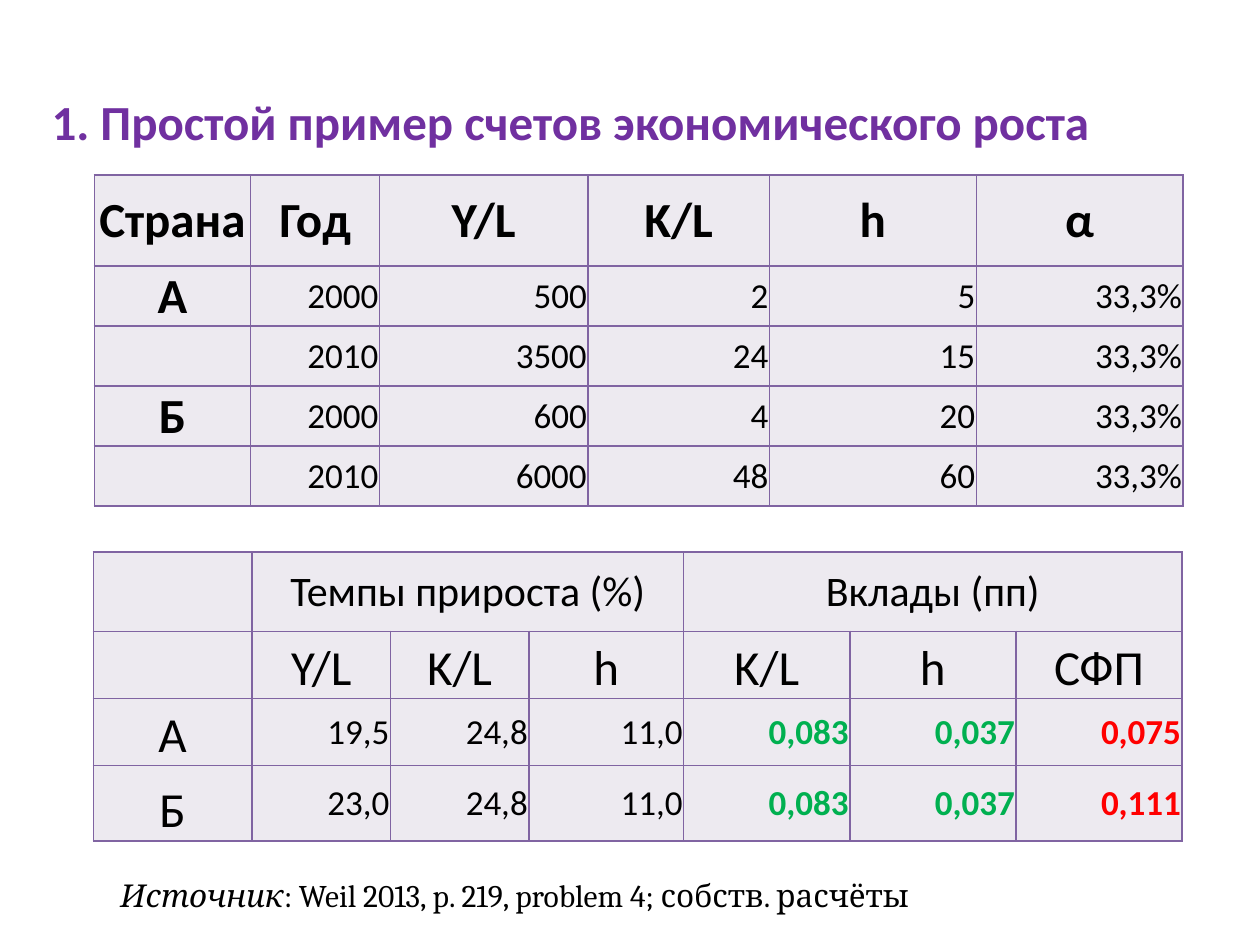
from dataclasses import dataclass

from lxml import etree
from pptx import Presentation
from pptx.dml.color import RGBColor
from pptx.enum.text import MSO_ANCHOR, PP_ALIGN
from pptx.oxml.ns import qn
from pptx.slide import Slide
from pptx.table import _Cell
from pptx.text.text import _Run
from pptx.util import Cm, Pt

CENTER, RIGHT = PP_ALIGN.CENTER, PP_ALIGN.RIGHT
MIDDLE, BOTTOM = MSO_ANCHOR.MIDDLE, MSO_ANCHOR.BOTTOM


@dataclass(frozen=True)
class Theme:
    body_font: str = "Calibri"
    source_font: str = "Cambria"
    title: str = "7030A0"
    text: str = "000000"
    cell: str = "EDEAF0"
    border: str = "8064A2"
    factor: str = "00B050"
    productivity: str = "FF0000"
    heading_size: int = 28
    group_size: int = 24
    value_size: int = 20
    source_size: int = 18
    border_width: int = 1


THEME = Theme()


@dataclass(frozen=True)
class CellStyle:
    size: int = THEME.heading_size
    color: str = THEME.text
    bold: bool = False
    align: PP_ALIGN = CENTER
    anchor: MSO_ANCHOR = MIDDLE


@dataclass(frozen=True)
class Row:
    height: float
    texts: list[str]
    styles: list[CellStyle]


@dataclass(frozen=True)
class Grid:
    """Table in centimetres; merges hold (row, first column, last column)."""
    left: float
    top: float
    widths: list[float]
    rows: list[Row]
    merges: tuple[tuple[int, int, int], ...] = ()


@dataclass(frozen=True)
class Phrase:
    text: str
    font: str
    size: int
    color: str
    bold: bool = False
    italic: bool = False


STRONG = CellStyle(bold=True)
GROUP = CellStyle(THEME.group_size)
LABEL = CellStyle(anchor=BOTTOM)
VALUE = CellStyle(THEME.value_size, align=RIGHT)
FACTOR = CellStyle(THEME.value_size, THEME.factor, True, RIGHT)
PRODUCTIVITY = CellStyle(THEME.value_size, THEME.productivity, True, RIGHT)

DATA_STYLES = [STRONG] + [VALUE] * 5
GROWTH_STYLES = [LABEL] + [VALUE] * 3 + [FACTOR] * 2 + [PRODUCTIVITY]

COUNTRY_DATA = Grid(
    1.9, 3.53, [3.15, 2.6, 4.2, 3.66, 4.17, 4.17],
    [Row(1.83, ["Страна", "Год", "Y/L", "K/L", "h", "α"], [STRONG] * 6)]
    + [Row(1.21, texts + ["33,3%"], DATA_STYLES) for texts in (
        ["А", "2000", "500", "2", "5"],
        ["", "2010", "3500", "24", "15"],
        ["Б", "2000", "600", "4", "20"],
        ["", "2010", "6000", "48", "60"],
    )],
)

GROWTH_ACCOUNTS = Grid(
    1.88, 11.13, [3.2, 2.79, 2.79, 3.12, 3.35, 3.35, 3.35],
    [
        Row(1.6, ["", "Темпы прироста (%)", "", "", "Вклады (пп)", "", ""],
            [GROUP] * 7),
        Row(1.35, ["", "Y/L", "K/L", "h", "K/L", "h", "СФП"], [LABEL] * 7),
        Row(1.35, ["А", "19,5", "24,8", "11,0", "0,083", "0,037", "0,075"],
            GROWTH_STYLES),
        Row(1.52, ["Б", "23,0", "24,8", "11,0", "0,083", "0,037", "0,111"],
            GROWTH_STYLES),
    ],
    merges=((0, 1, 3), (0, 4, 6)),
)


def format_run(run: _Run, font: str, size: int, color: str,
               bold: bool, italic: bool = False) -> None:
    run.font.name = font
    run.font.size = Pt(size)
    run.font.color.rgb = RGBColor.from_string(color)
    run.font.bold = bold
    run.font.italic = italic


def add_borders(cell: _Cell) -> None:
    properties = cell._tc.get_or_add_tcPr()
    for side in ("a:lnL", "a:lnR", "a:lnT", "a:lnB"):
        line = etree.SubElement(properties, qn(side),
                                w=str(Pt(THEME.border_width)))
        fill = etree.SubElement(line, qn("a:solidFill"))
        etree.SubElement(fill, qn("a:srgbClr"), val=THEME.border)


def fill_cell(cell: _Cell, text: str, style: CellStyle) -> None:
    add_borders(cell)
    cell.fill.solid()
    cell.fill.fore_color.rgb = RGBColor.from_string(THEME.cell)
    cell.margin_left = cell.margin_right = cell.margin_top = Cm(0.02)
    cell.margin_bottom = 0
    cell.vertical_anchor = style.anchor
    cell.text_frame.text = text
    paragraph = cell.text_frame.paragraphs[0]
    paragraph.alignment = style.align
    for run in paragraph.runs:
        format_run(run, THEME.body_font, style.size, style.color, style.bold)


def draw_grid(slide: Slide, grid: Grid) -> None:
    table = slide.shapes.add_table(
        len(grid.rows), len(grid.widths), Cm(grid.left), Cm(grid.top),
        Cm(sum(grid.widths)), Cm(sum(row.height for row in grid.rows)),
    ).table
    table.first_row = table.horz_banding = False
    for column, width in zip(table.columns, grid.widths):
        column.width = Cm(width)
    for row_index, first, last in grid.merges:
        table.cell(row_index, first).merge(table.cell(row_index, last))
    for table_row, row in zip(table.rows, grid.rows):
        table_row.height = Cm(row.height)
        for cell, text, style in zip(table_row.cells, row.texts, row.styles):
            fill_cell(cell, text, style)


def draw_line(slide: Slide, left: float, top: float, width: float,
              height: float, phrases: list[Phrase]) -> None:
    """Adds a one-paragraph text box made of differently styled phrases."""
    frame = slide.shapes.add_textbox(
        Cm(left), Cm(top), Cm(width), Cm(height)).text_frame
    frame.word_wrap = True
    for phrase in phrases:
        run = frame.paragraphs[0].add_run()
        run.text = phrase.text
        format_run(run, phrase.font, phrase.size, phrase.color,
                   phrase.bold, phrase.italic)


def main() -> None:
    presentation = Presentation()
    presentation.slide_width, presentation.slide_height = Cm(25.4), Cm(19.05)
    slide = presentation.slides.add_slide(presentation.slide_layouts[6])
    draw_line(slide, 0.79, 1.73, 23.8, 1.45, [
        Phrase("1. Простой пример счетов экономического роста",
               THEME.body_font, THEME.heading_size, THEME.title, bold=True),
    ])
    draw_grid(slide, COUNTRY_DATA)
    draw_grid(slide, GROWTH_ACCOUNTS)
    source_look = (THEME.source_font, THEME.source_size, THEME.text)
    draw_line(slide, 2.18, 17.53, 21.41, 1.02, [
        Phrase("Источник", *source_look, italic=True),
        Phrase(": Weil 2013, p. 219, problem 4; собств. расчёты",
               *source_look),
    ])
    presentation.save("out.pptx")


if __name__ == "__main__":
    main()
